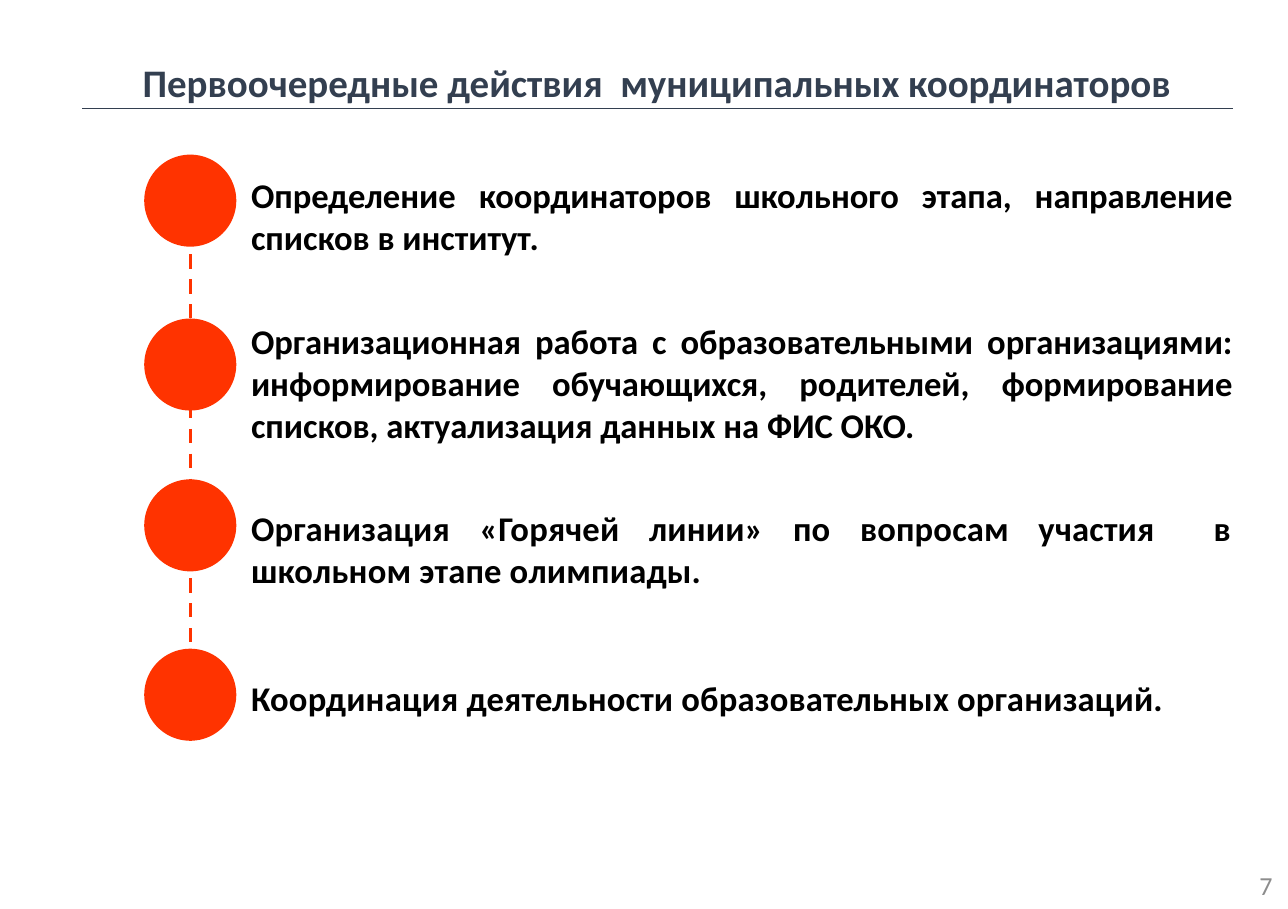
from pptx import Presentation
from pptx import util as u
from pptx.dml.color import RGBColor
from pptx.enum import dml, shapes, text
from pptx.oxml.ns import qn
from lxml import etree

NAVY = RGBColor(0x33, 0x3F, 0x50)
RED = RGBColor(0xFF, 0x33, 0x00)
BLACK = RGBColor(0x00, 0x00, 0x00)
GREY = RGBColor(0x8C, 0x8C, 0x8C)

LEFT = text.PP_ALIGN.JUSTIFY
MID = text.MSO_ANCHOR.MIDDLE
TOP = text.MSO_ANCHOR.TOP

AXIS = 3.1   # centre of the dot column, cm
DOT = 1.5    # dot diameter, cm
ROW = 0.7    # height of one text line, cm

# dot top, text top, line count, letter spacing in 1/100 pt, wording
STEPS = [
    (2.52, 2.8, 2, 0, "Определение координаторов школьного этапа, "
     "направление списков в институт."),
    (5.19, 5.18, 3, 0, "Организационная работа с образовательными "
     "организациями: информирование обучающихся, родителей, "
     "формирование списков, актуализация данных на ФИС ОКО."),
    (7.81, 8.23, 2, 10, "Организация «Горячей линии» по вопросам участия  в "
     "школьном этапе олимпиады."),
    (10.57, 11, 1, 10, "Координация деятельности образовательных организаций."),
]


class Page:
    def __init__(self, slide, font):
        self.slide = slide
        self.font = font

    def line(self, x1, y1, x2, y2, color, width, dash=None):
        item = self.slide.shapes.add_connector(
            shapes.MSO_CONNECTOR.STRAIGHT,
            u.Cm(x1), u.Cm(y1), u.Cm(x2), u.Cm(y2))
        item.line.color.rgb = color
        item.line.width = u.Pt(width)
        if dash:
            item.line.dash_style = dash
        etree.SubElement(item._element.spPr, qn("a:effectLst"))

    def dot(self, x, y, size, color):
        item = self.slide.shapes.add_shape(
            shapes.MSO_SHAPE.OVAL, u.Cm(x), u.Cm(y), u.Cm(size), u.Cm(size))
        item.shadow.inherit = False
        item.fill.solid()
        item.fill.fore_color.rgb = color
        item.line.fill.background()

    def label(self, box, words, size, color, align, bold=True,
              anchor=MID, pads=(0, 0, 0, 0), track=0):
        item = self.slide.shapes.add_textbox(*[u.Cm(v) for v in box])
        frame = item.text_frame
        frame.word_wrap = True
        frame.vertical_anchor = anchor
        (frame.margin_left, frame.margin_top,
         frame.margin_right, frame.margin_bottom) = [u.Cm(v) for v in pads]
        para = frame.paragraphs[0]
        para.alignment = align
        run = para.add_run()
        run.text = words
        run.font.name = self.font
        run.font.size = u.Pt(size)
        run.font.bold = bold
        run.font.color.rgb = color
        if track:
            run.font._element.set("spc", str(track))
        return para


def main():
    deck = Presentation()
    deck.slide_width, deck.slide_height = u.Cm(20.98), u.Cm(14.81)
    page = Page(deck.slides.add_slide(deck.slide_layouts[6]), "Calibri")

    # Dashed spine behind the dots
    page.line(AXIS, STEPS[0][0], AXIS, STEPS[-1][0] + DOT, RED, 1.65,
              dml.MSO_LINE.DASH)

    # Title with its rule
    page.line(1.34, 1.77, 20.09, 1.77, NAVY, 0.5)
    page.label((1.34, 0.95, 18.73, 0.77),
               "Первоочередные действия  муниципальных координаторов",
               18, NAVY, text.PP_ALIGN.CENTER)

    # Steps
    for top, head, rows, track, words in STEPS:
        page.dot(AXIS - DOT / 2, top, DOT, RED)
        para = page.label((4.06, head, 16.03, rows * ROW), words, 16, BLACK,
                          LEFT, anchor=TOP, pads=(0.03, 0.03, 0, 0),
                          track=track)
        para.line_spacing = 1.01
        para.space_before = u.Pt(0.9)

    # Page number
    page.label((19.71, 14.02, 1.27, 0.79), "7", 12, GREY,
               text.PP_ALIGN.RIGHT, bold=False, pads=(0.25, 0.13, 0.25, 0.13))

    deck.save("out.pptx")


if __name__ == "__main__":
    main()
